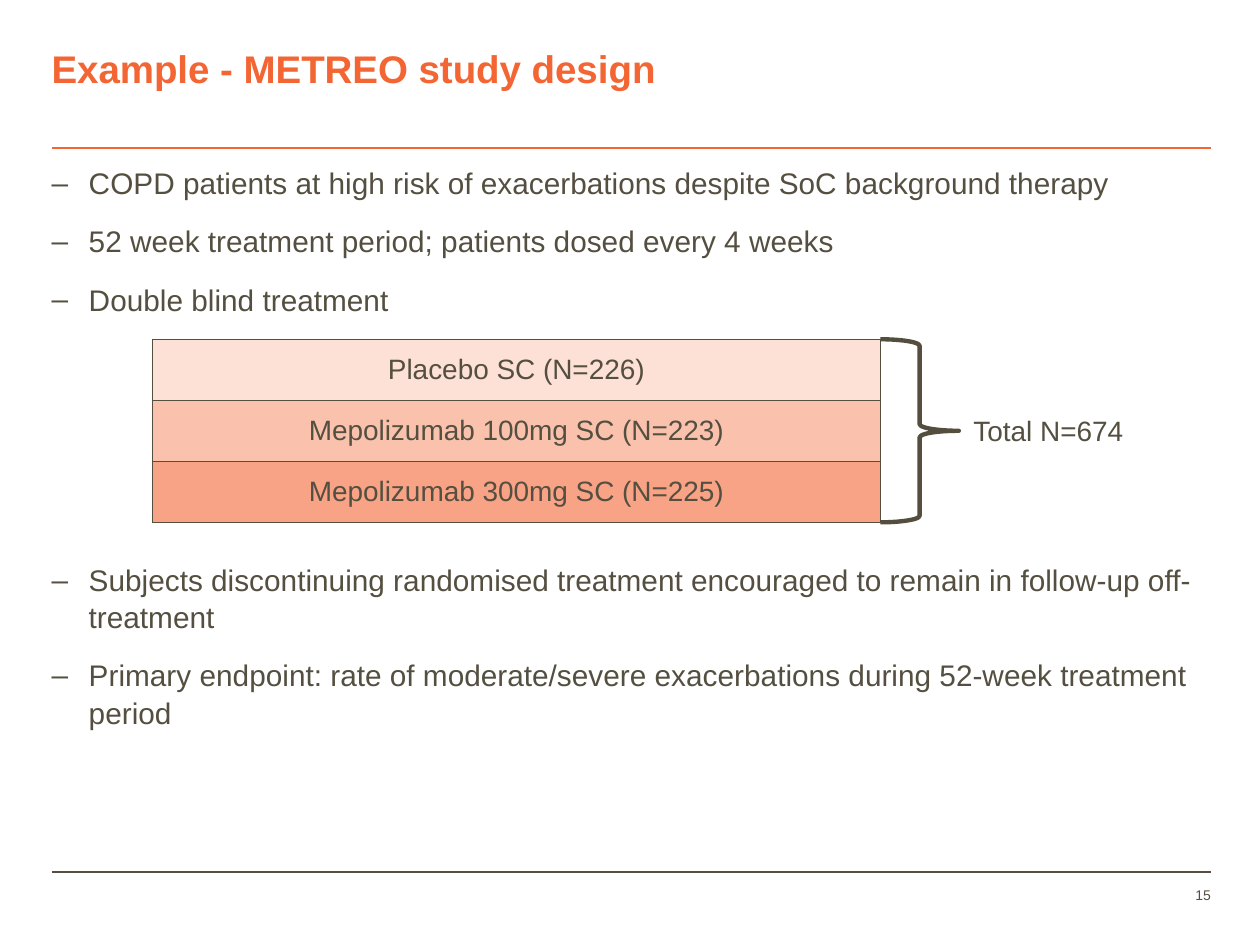
from lxml.etree import SubElement
from pptx import Presentation
from pptx.dml.color import RGBColor
from pptx.enum.shapes import MSO_CONNECTOR, MSO_SHAPE
from pptx.enum.text import MSO_ANCHOR, PP_ALIGN
from pptx.oxml.ns import qn
from pptx.util import Cm, Pt

COLORS = {
    "orange": "F36633",
    "text": "544F40",
    "brace": "534E3E",
}
LEFT, RIGHT = 1.04, 24.41
WIDTH = RIGHT - LEFT


def style(paragraph, size, color="text", bold=False):
    paragraph.font.name = "Arial"
    paragraph.font.size = Pt(size)
    paragraph.font.bold = bold
    paragraph.font.color.rgb = RGBColor.from_string(COLORS[color])


def add_text_frame(slide, left, top, width, height):
    box = slide.shapes.add_textbox(Cm(left), Cm(top), Cm(width), Cm(height))
    frame = box.text_frame
    frame.word_wrap = True
    frame.margin_left = frame.margin_right = 0
    frame.margin_top = frame.margin_bottom = 0
    return frame


presentation = Presentation()
presentation.slide_width = Cm(25.4)
presentation.slide_height = Cm(19.05)
slide = presentation.slides.add_slide(presentation.slide_layouts[6])

for top, color in ((17.58, "text"), (2.99, "orange")):
    rule = slide.shapes.add_connector(
        MSO_CONNECTOR.STRAIGHT, Cm(LEFT), Cm(top), Cm(RIGHT), Cm(top)
    )
    rule.line.color.rgb = RGBColor.from_string(COLORS[color])
    rule.line.width = Pt(1)
    SubElement(rule._element.spPr, qn("a:effectLst"))

title = add_text_frame(slide, LEFT, 0.9, 21.03, 1).paragraphs[0]
title.text = "Example - METREO study design"
style(title, 22, "orange", bold=True)

bullet_blocks = [
    (3.3, 3.2, [
        "COPD patients at high risk of exacerbations despite SoC background therapy",
        "52 week treatment period; patients dosed every 4 weeks",
        "Double blind treatment",
    ]),
    (11.3, 3.7, [
        "Subjects discontinuing randomised treatment encouraged to remain in follow-up off-treatment",
        "Primary endpoint: rate of moderate/severe exacerbations during 52-week treatment period",
    ]),
]
for top, height, bullets in bullet_blocks:
    frame = add_text_frame(slide, LEFT, top, WIDTH, height)
    for index, bullet in enumerate(bullets):
        paragraph = frame.add_paragraph() if index else frame.paragraphs[0]
        paragraph.text = bullet
        properties = paragraph._p.get_or_add_pPr()
        properties.set("marL", str(Cm(0.75)))
        properties.set("indent", str(Cm(-0.75)))
        SubElement(properties, qn("a:buFont"), typeface="Arial")
        SubElement(properties, qn("a:buChar"), char="–")
        paragraph.line_spacing = 1.04
        paragraph.space_before = Pt(6 if index else 0)
        paragraph.space_after = Pt(6)
        style(paragraph, 17)

arms = [
    ("Placebo SC (N=226)", "FDE0D6"),
    ("Mepolizumab 100mg SC (N=223)", "FAC2AD"),
    ("Mepolizumab 300mg SC (N=225)", "F8A385"),
]
table_left, table_top, table_width, row_height = 3.07, 6.84, 14.68, 1.23
table_height = row_height * len(arms)
table = slide.shapes.add_table(
    len(arms), 1, Cm(table_left), Cm(table_top), Cm(table_width), Cm(table_height)
).table
table.first_row = False
table.horz_banding = False
for row, (arm, fill) in enumerate(arms):
    table.rows[row].height = Cm(row_height)
    cell = table.cell(row, 0)
    cell.text = arm
    cell.vertical_anchor = MSO_ANCHOR.MIDDLE
    paragraph = cell.text_frame.paragraphs[0]
    paragraph.alignment = PP_ALIGN.CENTER
    style(paragraph, 16)
    properties = cell._tc.get_or_add_tcPr()
    for side in ("a:lnL", "a:lnR", "a:lnT", "a:lnB"):
        border = SubElement(properties, qn(side), w=str(Pt(1)))
        border_fill = SubElement(border, qn("a:solidFill"))
        SubElement(border_fill, qn("a:srgbClr"), val=COLORS["text"])
    cell.fill.solid()
    cell.fill.fore_color.rgb = RGBColor.from_string(fill)

brace_left, brace_width = table_left + table_width, 1.58
brace = slide.shapes.add_shape(
    MSO_SHAPE.RIGHT_BRACE, Cm(brace_left), Cm(table_top),
    Cm(brace_width), Cm(table_height),
)
brace.shadow.inherit = False
brace.fill.background()
brace.line.color.rgb = RGBColor.from_string(COLORS["brace"])
brace.line.width = Pt(2.5)

total_height = 1.3
total_frame = add_text_frame(
    slide, brace_left + brace_width,
    table_top + (table_height - total_height) / 2, 3.61, total_height,
)
total_frame.vertical_anchor = MSO_ANCHOR.MIDDLE
total = total_frame.paragraphs[0]
total.text = "Total N=674"
total.alignment = PP_ALIGN.CENTER
style(total, 16)

page_number = add_text_frame(slide, RIGHT - 2.31, 17.88, 2.31, 1).paragraphs[0]
page_number.text = "15"
page_number.alignment = PP_ALIGN.RIGHT
style(page_number, 8)

presentation.save("out.pptx")
